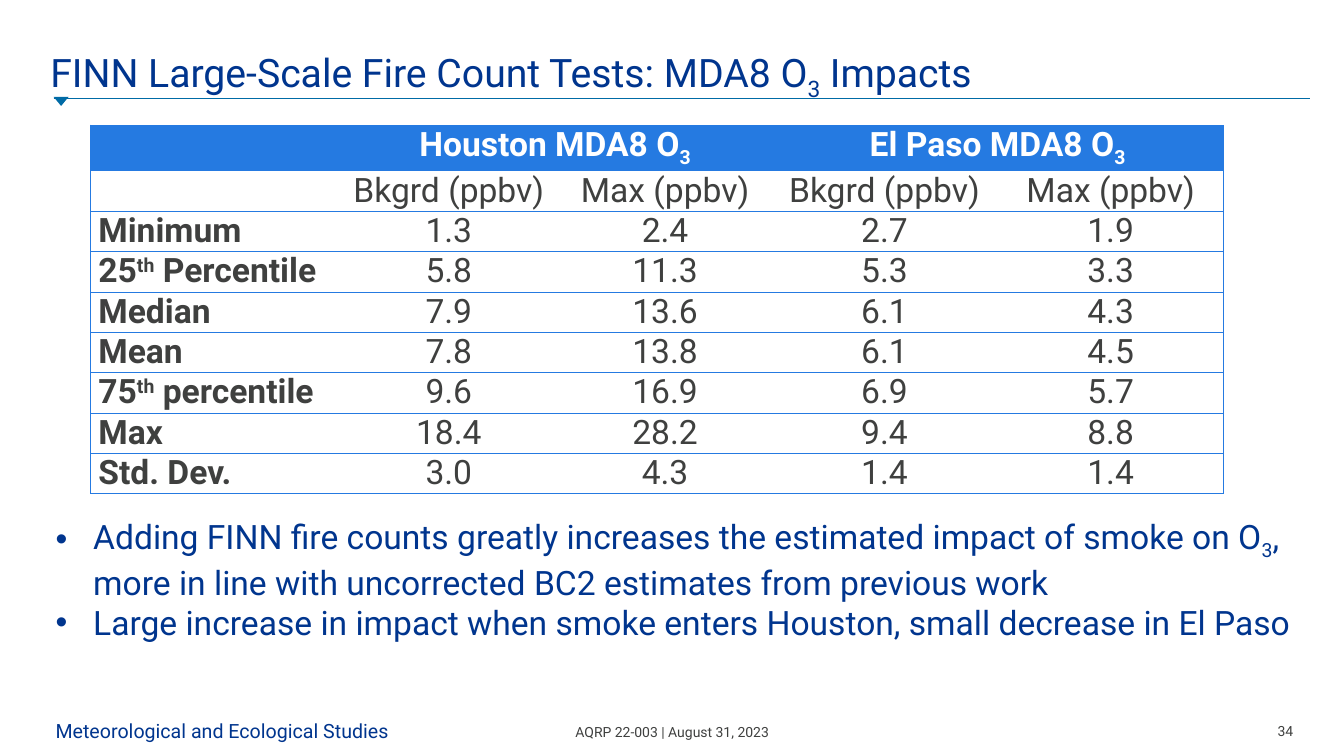
from lxml.etree import SubElement
from pptx import Presentation
from pptx.dml.color import RGBColor as RGB
from pptx.enum.shapes import MSO_CONNECTOR as LINE, MSO_SHAPE as SHAPE
from pptx.enum.text import MSO_ANCHOR as ANCHOR, PP_ALIGN as ALIGN
from pptx.oxml.ns import qn
from pptx.util import Cm, Pt

HUES = {"navy": "00358E", "teal": "006BA6", "blue": "257AE1",
        "gray": "3F403F", "white": "FFFFFF"}


def write(para, text, size, hue, bold=False):
    """Every second part between ~ marks is a subscript digit or a superscript."""
    for i, part in enumerate(text.split("~")):
        for j, line in enumerate(part.split("\n")):
            if j:
                para.add_line_break()
            run = para.add_run()
            run.text = line
            look = {"name": "Roboto", "size": Pt(size), "bold": bold}
            for key, val in look.items():
                setattr(run.font, key, val)
            run.font.color.rgb = RGB.from_string(HUES[hue])
            if i % 2:
                base = "-25000" if part.isdigit() else "30000"
                run.font._element.set("baseline", base)


def add_box(left, top, width, height, pad=0):
    frame = slide.shapes.add_textbox(Cm(left), Cm(top), Cm(width), Cm(height)).text_frame
    look = {"word_wrap": True, "margin_left": Cm(pad), "margin_top": 0,
            "margin_right": 0, "margin_bottom": 0}
    for key, val in look.items():
        setattr(frame, key, val)
    return frame


deck = Presentation()
deck.slide_width, deck.slide_height = Cm(33.87), Cm(19.05)
slide = deck.slides.add_slide(deck.slide_layouts[6])

# Title rule with its marker
rule = slide.shapes.add_connector(LINE.STRAIGHT, Cm(1.35), Cm(2.49), Cm(33.02), Cm(2.49))
rule.line.color.rgb = RGB.from_string(HUES["teal"])
rule.line.width = Pt(0.75)
SubElement(rule._element.spPr, qn("a:effectLst"))
mark = slide.shapes.add_shape(SHAPE.ISOSCELES_TRIANGLE, Cm(1.35), Cm(2.44), Cm(0.38), Cm(0.23))
mark.rotation = 180
mark.shadow.inherit = False
mark.fill.solid()
mark.fill.fore_color.rgb = RGB.from_string(HUES["teal"])
mark.line.fill.background()

# Title
title = add_box(1.27, 0.58, 25.4, 1.85)
title.vertical_anchor = ANCHOR.BOTTOM
title.paragraphs[0].line_spacing = 0.8
write(title.paragraphs[0], "FINN Large-Scale Fire Count Tests: MDA8 O~3~ Impacts", 28, "navy")

# Footer: left, top, width, height, inset, alignment, text, size, colour
FOOT = [
    (1.27, 18.11, 9.5, 0.61, 0.13, ALIGN.LEFT, "Meteorological and Ecological Studies", 14, "navy"),
    (12.9, 18.24, 8.08, 0.43, 0, ALIGN.CENTER, "AQRP 22-003 | August 31, 2023", 10, "gray"),
    (32.11, 18.21, 0.48, 0.43, 0, ALIGN.RIGHT, "34", 10, "gray"),
]
for *area, side, text, size, hue in FOOT:
    para = add_box(*area).paragraphs[0]
    para.alignment = side
    write(para, text, size, hue)

# Table of impacts
ROWS = [
    ["", "Houston MDA8 O~3", "", "El Paso MDA8 O~3", ""],
    ["", "Bkgrd (ppbv)", "Max (ppbv)", "Bkgrd (ppbv)", "Max (ppbv)"],
    ["Minimum", "1.3", "2.4", "2.7", "1.9"],
    ["25~th~ Percentile", "5.8", "11.3", "5.3", "3.3"],
    ["Median", "7.9", "13.6", "6.1", "4.3"],
    ["Mean", "7.8", "13.8", "6.1", "4.5"],
    ["75~th~ percentile", "9.6", "16.9", "6.9", "5.7"],
    ["Max", "18.4", "28.2", "9.4", "8.8"],
    ["Std. Dev.", "3.0", "4.3", "1.4", "1.4"],
]
WIDTHS = [6.25, 5.54, 5.36, 5.7, 5.7]
grid = slide.shapes.add_table(len(ROWS), len(WIDTHS), Cm(2.29), Cm(3.15),
                              Cm(sum(WIDTHS)), Cm(9.15)).table
grid.horz_banding = False
for col, width in zip(grid.columns, WIDTHS):
    col.width = Cm(width)
for c in (1, 3):
    grid.cell(0, c).merge(grid.cell(0, c + 1))

for r, row in enumerate(ROWS):
    grid.rows[r].height = Cm(1 if r else 1.12)
    for c, text in enumerate(row):
        cell = grid.cell(r, c)
        look = {"margin_left": Cm(0.19), "margin_right": Cm(0.19),
                "margin_top": 0, "margin_bottom": 0}
        for key, val in look.items():
            setattr(cell, key, val)

        # Lines across every row, and down the outer sides only
        props = cell._tc.get_or_add_tcPr()
        sides = {"L": c == 0, "R": c == len(WIDTHS) - 1, "T": True, "B": True}
        for side, shown in sides.items():
            edge = SubElement(props, qn(f"a:ln{side}"), w=str(Pt(0.75)))
            if shown:
                paint = SubElement(edge, qn("a:solidFill"))
                SubElement(paint, qn("a:srgbClr"), val=HUES["blue"])
            else:
                SubElement(edge, qn("a:noFill"))

        cell.fill.solid()
        cell.fill.fore_color.rgb = RGB.from_string(HUES["white" if r else "blue"])
        if text:
            para = cell.text_frame.paragraphs[0]
            para.alignment = ALIGN.CENTER if c else ALIGN.JUSTIFY
            write(para, text, 24, "gray" if r else "white", r == 0 or c == 0)

# Findings
NOTES = [
    "Adding FINN fire counts greatly increases the estimated impact of smoke on O~3~,\n"
    "more in line with uncorrected BC2 estimates from previous work",
    "Large increase in impact when smoke enters Houston, small decrease in El Paso",
]
notes = add_box(1.27, 13, 32.2, 3.2, 0.13)
for i, text in enumerate(NOTES):
    para = notes.add_paragraph() if i else notes.paragraphs[0]
    props = para._p.get_or_add_pPr()
    props.set("marL", str(Cm(0.95)))
    props.set("indent", str(-Cm(0.95)))
    SubElement(props, qn("a:buFont"), typeface="Arial")
    SubElement(props, qn("a:buChar"), char="•")
    write(para, text, 24, "navy")

deck.save("out.pptx")
